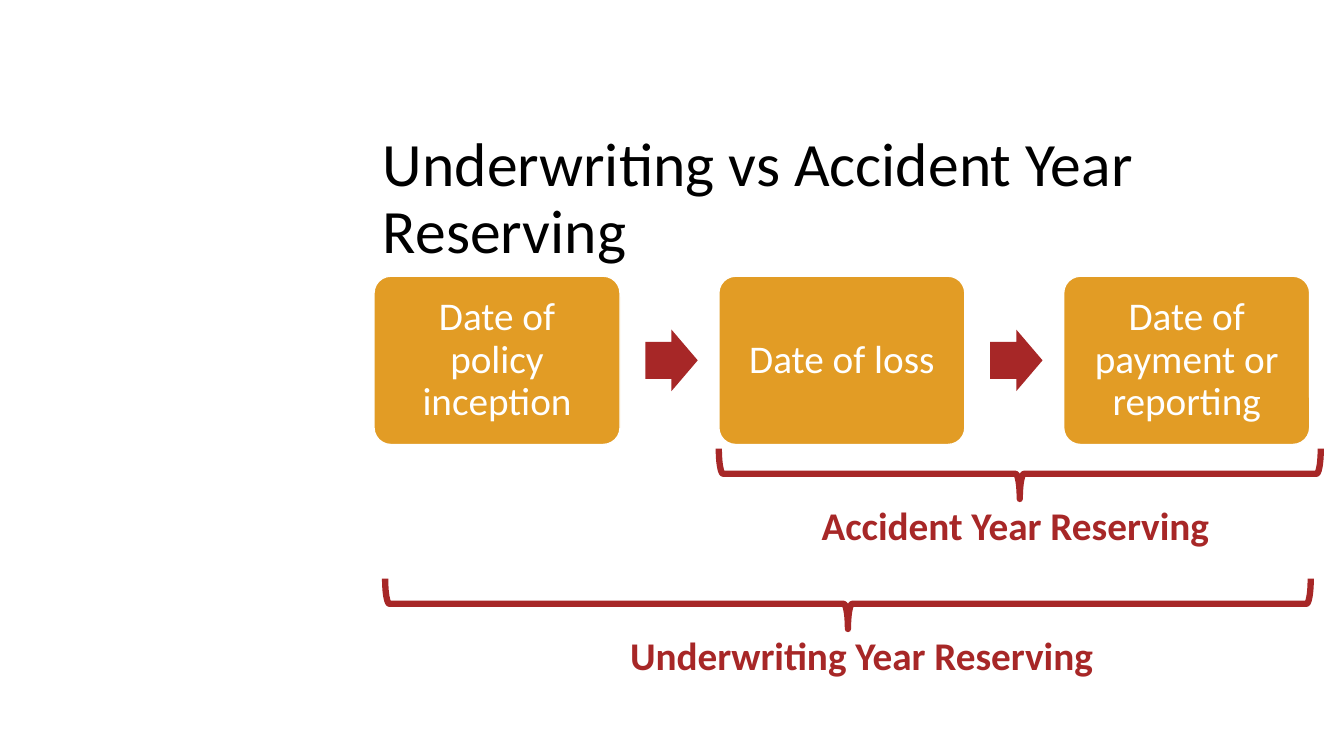
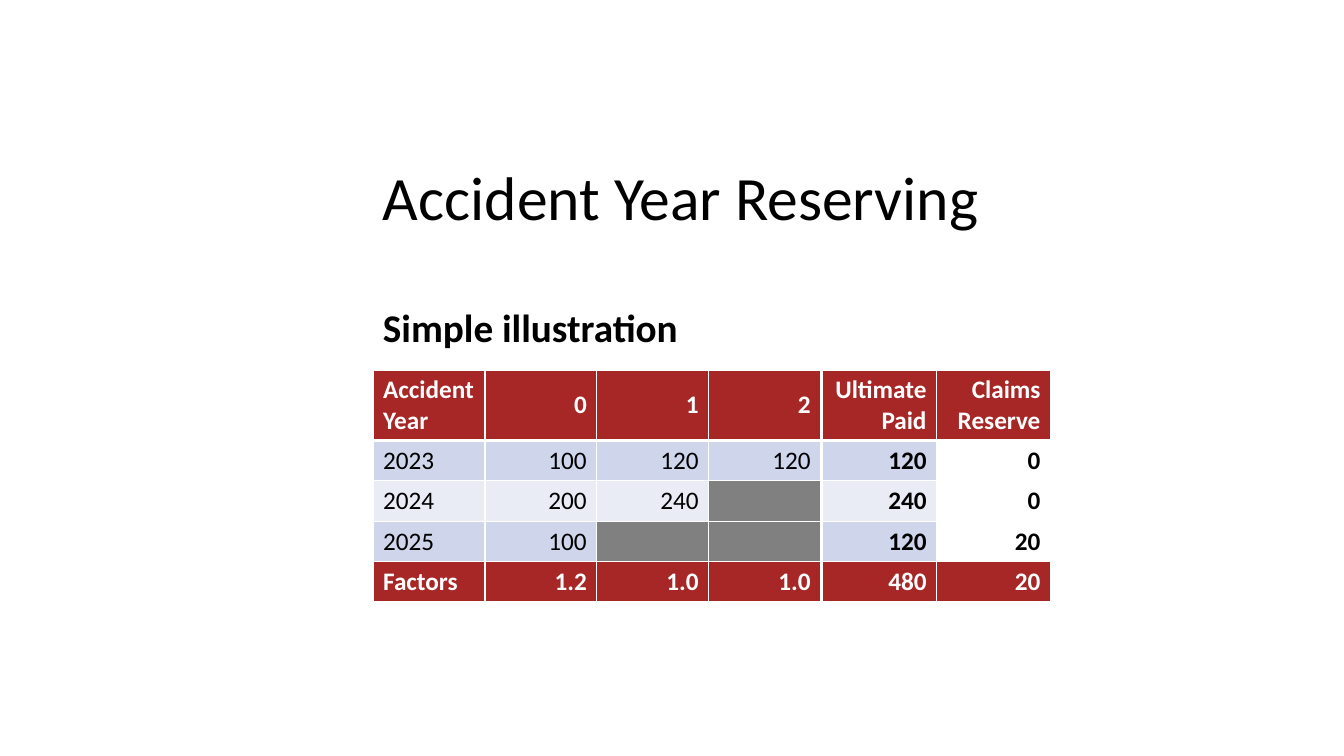
from lxml import etree
from pptx import Presentation
from pptx.dml.color import RGBColor
from pptx.enum.shapes import MSO_SHAPE
from pptx.enum.text import MSO_ANCHOR, PP_ALIGN
from pptx.oxml.ns import qn
from pptx.util import Inches, Pt

# Shared style
FONT = "Calibri"
BLACK, WHITE, RED, AMBER, GREY = "000000", "FFFFFF", "A72727", "E29C25", "808080"
BANDS = ("CFD5EA", "E9EBF5")
LEFT, CONTENT_W = 3.7, 8.71

# Flow slide content
FLOW_TITLE = "Underwriting vs Accident Year Reserving"
STEPS = ["Date of policy inception", "Date of loss", "Date of payment or reporting"]
STEP_LEFT, STEP_TOP, STEP_W, STEP_H, STEP_PITCH = 3.71, 2.74, 2.44, 1.67, 3.42
ARROW_W, ARROW_H, ARROW_GAP = 0.52, 0.61, 0.25
BRACE_DEPTH = 0.5
# label, brace left, brace top, brace width, label left, label width
SPANS = [
    ("Accident Year Reserving", 7.13, 4.45, 5.97, 8.05, 4.75),
    ("Underwriting Year Reserving", 3.82, 5.74, 9.18, 6.15, 5.25),
]

# Table slide content; None marks a period not yet developed
TABLE_TITLE = "Accident Year Reserving"
SUBTITLE = "Simple illustration"
TRIANGLE = [
    ["Accident Year", "0", "1", "2"],
    ["2023", "100", "120", "120"],
    ["2024", "200", "240", None],
    ["2025", "100", None, None],
    ["Factors", "1.2", "1.0", "1.0"],
]
RESULTS = [
    ["Ultimate\nPaid", "Claims Reserve"],
    ["120", "0"],
    ["240", "0"],
    ["120", "20"],
    ["480", "20"],
]
TABLE_TOP, HEADER_H, ROW_H = 3.67, 0.7, 0.4


def rgb(color):
    return RGBColor.from_string(color)


def write(tf, text, size, color, bold=False, align=PP_ALIGN.LEFT, spacing=None):
    tf.text = text
    for p in tf.paragraphs:
        p.alignment = align
        if spacing:
            p.line_spacing = spacing
        for r in p.runs:
            r.font.name, r.font.size, r.font.bold = FONT, Pt(size), bold
            r.font.color.rgb = rgb(color)


def add_text(s, box, text, size, color, anchor=MSO_ANCHOR.TOP, **style):
    tf = s.shapes.add_textbox(*map(Inches, box)).text_frame
    tf.word_wrap = True
    tf.vertical_anchor = anchor
    write(tf, text, size, color, **style)


def add_shape(s, kind, box, fill=None, line=None, width=1):
    sp = s.shapes.add_shape(kind, *map(Inches, box))
    sp.shadow.inherit = False
    if fill:
        sp.fill.solid()
        sp.fill.fore_color.rgb = rgb(fill)
    else:
        sp.fill.background()
    if line:
        sp.line.color.rgb = rgb(line)
        sp.line.width = Pt(width)
    else:
        sp.line.fill.background()
    return sp


def add_slide(prs, title):
    s = prs.slides.add_slide(prs.slide_layouts[6])
    add_text(s, (LEFT, 1.26, CONTENT_W, 1.45), title, 44, BLACK,
             anchor=MSO_ANCHOR.MIDDLE, spacing=0.9)
    return s


def set_borders(cell, **widths):
    tcPr = cell._tc.get_or_add_tcPr()
    for side in "LRTB":
        ln = etree.SubElement(tcPr, qn(f"a:ln{side}"), w=str(Pt(widths.get(side, 1))))
        fill = etree.SubElement(ln, qn("a:solidFill"))
        etree.SubElement(fill, qn("a:srgbClr"), val=WHITE)


def add_table(s, left, col_w, rows, is_results=False):
    n_rows, n_cols = len(rows), len(rows[0])
    height = HEADER_H + ROW_H * (n_rows - 1)
    box = (left, TABLE_TOP, col_w * n_cols, height)
    table = s.shapes.add_table(n_rows, n_cols, *map(Inches, box)).table
    table.first_row = table.horz_banding = False
    for col in table.columns:
        col.width = Inches(col_w)
    for i, values in enumerate(rows):
        table.rows[i].height = Inches(ROW_H if i else HEADER_H)
        in_edge_row = i in (0, n_rows - 1)
        for j, value in enumerate(values):
            cell = table.cell(i, j)
            set_borders(cell, B=3 if i == 0 else 1, T=3 if i == 1 else 1)
            is_label = j == 0 and not is_results
            if not is_label:
                cell.vertical_anchor = MSO_ANCHOR.MIDDLE
            # The reserve column has no band fill
            if is_results and j == n_cols - 1 and not in_edge_row:
                cell.fill.background()
            else:
                fill = RED if in_edge_row else BANDS[(i - 1) % 2]
                cell.fill.solid()
                cell.fill.fore_color.rgb = rgb(GREY if value is None else fill)
            if value is not None:
                write(cell.text_frame, value, 18, WHITE if in_edge_row else BLACK,
                      bold=in_edge_row or is_results,
                      align=PP_ALIGN.LEFT if is_label else PP_ALIGN.RIGHT)


def build_flow(prs):
    s = add_slide(prs, FLOW_TITLE)
    # Steps, with an arrow after each but the last
    for i, text in enumerate(STEPS):
        x = STEP_LEFT + i * STEP_PITCH
        sp = add_shape(s, MSO_SHAPE.ROUNDED_RECTANGLE, (x, STEP_TOP, STEP_W, STEP_H),
                       AMBER, WHITE)
        sp.adjustments[0] = 0.1
        tf = sp.text_frame
        tf.word_wrap = True
        tf.vertical_anchor = MSO_ANCHOR.MIDDLE
        tf.margin_left = tf.margin_right = tf.margin_top = tf.margin_bottom = Inches(0.12)
        write(tf, text, 28, WHITE, align=PP_ALIGN.CENTER, spacing=0.9)
        if i < len(STEPS) - 1:
            box = (x + STEP_W + ARROW_GAP, STEP_TOP + (STEP_H - ARROW_H) / 2,
                   ARROW_W, ARROW_H)
            arrow = add_shape(s, MSO_SHAPE.RIGHT_ARROW, box, RED)
            arrow.adjustments[0] = 0.6
    # Braces: upright boxes turned about their centres
    for label, x, y, w, label_x, label_w in SPANS:
        box = (x + (w - BRACE_DEPTH) / 2, y - (w - BRACE_DEPTH) / 2, BRACE_DEPTH, w)
        brace = add_shape(s, MSO_SHAPE.LEFT_BRACE, box, line=RED, width=4.5)
        brace.rotation = 270
        add_text(s, (label_x, y + 0.47, label_w, 0.57), label, 28, RED, bold=True)


def build_tables(prs):
    s = add_slide(prs, TABLE_TITLE)
    add_text(s, (LEFT, 3.01, CONTENT_W, 0.6), SUBTITLE, 28, BLACK, bold=True, spacing=0.9)
    add_table(s, LEFT, 1.11, TRIANGLE)
    add_table(s, 8.16, 1.13, RESULTS, is_results=True)


def main():
    prs = Presentation()
    prs.slide_width, prs.slide_height = Inches(13.33), Inches(7.5)
    build_flow(prs)
    build_tables(prs)
    prs.save("out.pptx")


if __name__ == "__main__":
    main()
